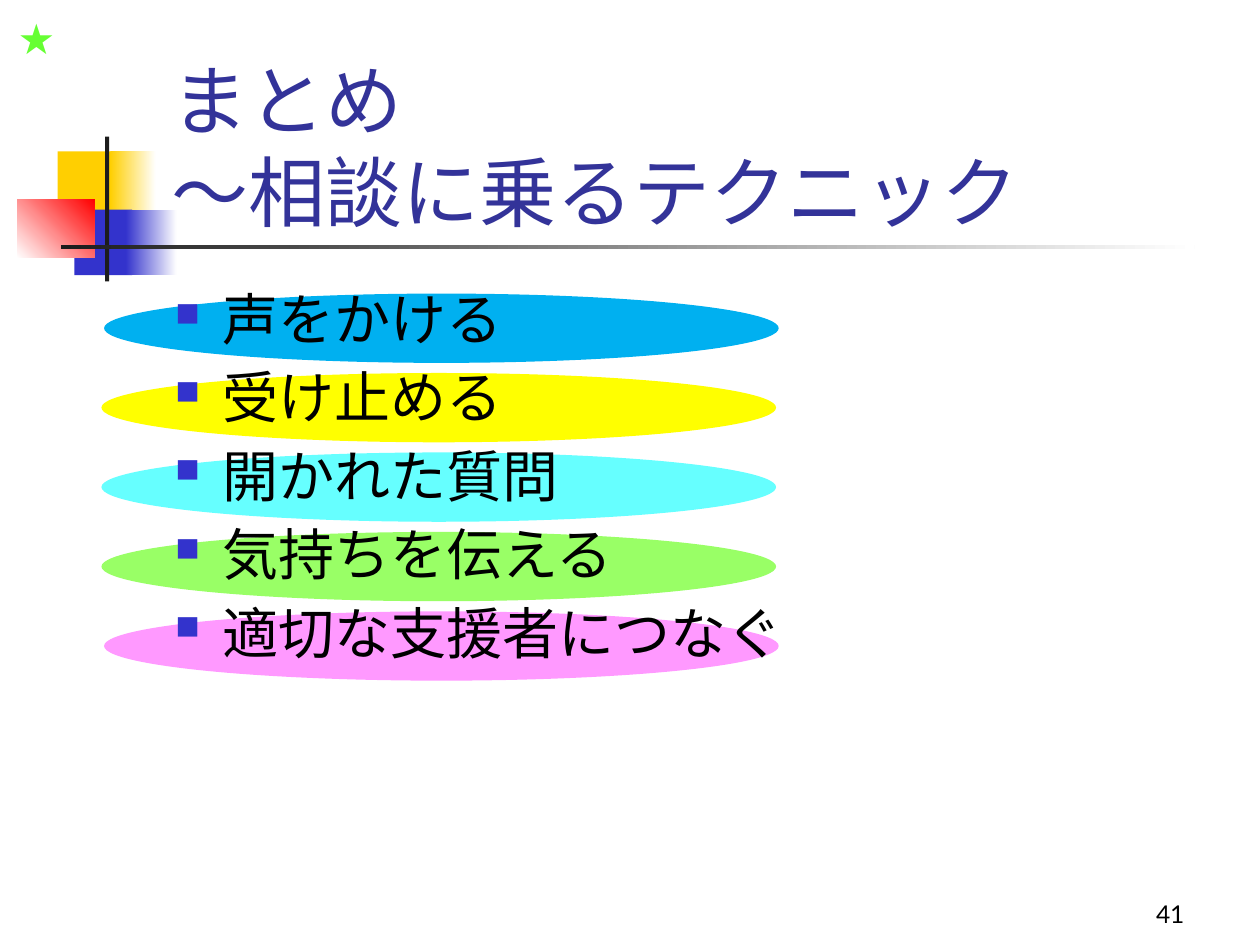
from lxml.etree import SubElement
from pptx import Presentation
from pptx.dml.color import RGBColor
from pptx.enum.shapes import MSO_SHAPE as Shape
from pptx.enum.text import MSO_ANCHOR as Anchor, MSO_AUTO_SIZE as AutoSize, PP_ALIGN as Align
from pptx.oxml.ns import qn
from pptx.util import Pt

WHITE = RGBColor(0xFF, 0xFF, 0xFF)
BLACK = RGBColor(0, 0, 0)
CHARCOAL = RGBColor(0x1C, 0x1C, 0x1C)
GOLD = RGBColor(0xFF, 0xCF, 0x01)
BLUE = RGBColor(0x33, 0x33, 0xCC)
NAVY = RGBColor(0x33, 0x33, 0x99)
RED = RGBColor(0xFF, 0, 0)
SKY = RGBColor(0, 0xB0, 0xF0)
YELLOW = RGBColor(0xFF, 0xFF, 0)
AQUA = RGBColor(0x66, 0xFF, 0xFF)
LIME = RGBColor(0x99, 0xFF, 0x66)
PINK = RGBColor(0xFF, 0x99, 0xFF)
GREEN = RGBColor(0x66, 0xFF, 0x33)


def add_bullet(para, color, indent, percent):
    """Give the paragraph a square bullet on a hanging indent."""
    props = para._p.get_or_add_pPr()
    props.set("marL", str(Pt(indent)))
    props.set("indent", str(-Pt(indent)))
    holder = SubElement(props, qn("a:buClr"))
    SubElement(holder, qn("a:srgbClr"), val=str(color))
    SubElement(props, qn("a:buSzPct"), val=str(percent * 1000))
    SubElement(props, qn("a:buChar"), char="■")


class SlideBuilder:
    font = "Lato"

    def __init__(self, page):
        self.page = page

    def shape(self, kind, left, top, width, height, color, end=None, angle=0):
        """Add a plain shape, or one fading from color to end."""
        shape = self.page.shapes.add_shape(kind, Pt(left), Pt(top), Pt(width), Pt(height))
        shape.shadow.inherit = False
        shape.line.fill.background()
        if end is None:
            shape.fill.solid()
            shape.fill.fore_color.rgb = color
        else:
            shape.fill.gradient()
            shape.fill.gradient_angle = angle
            for stop, tone in zip(shape.fill.gradient_stops, (color, end)):
                stop.color.rgb = tone

    def text(self, left, top, width, height, lines, size, color, align=Align.LEFT,
             anchor=Anchor.TOP, wrap=True, bullet=None, before=0):
        """Add a text box with one paragraph for each of the lines."""
        box = self.page.shapes.add_textbox(Pt(left), Pt(top), Pt(width), Pt(height))
        frame = box.text_frame
        frame.word_wrap = wrap
        frame.auto_size = AutoSize.NONE if wrap else AutoSize.SHAPE_TO_FIT_TEXT
        frame.vertical_anchor = anchor
        for index, line in enumerate(lines):
            para = frame.add_paragraph() if index else frame.paragraphs[0]
            para.text = line
            para.alignment = align
            para.space_before = Pt(before)
            for span in para.runs:
                span.font.name = self.font
                span.font.size = Pt(size)
                span.font.color.rgb = color
            if bullet is not None:
                add_bullet(para, bullet, indent=27, percent=60)


def main():
    deck = Presentation()
    deck.slide_width, deck.slide_height = Pt(720), Pt(540)
    page = deck.slides.add_slide(deck.slide_layouts[6])
    builder = SlideBuilder(page)

    # Corner ornament and title rule
    block = Shape.RECTANGLE
    builder.shape(block, 33, 86.5, 34.5, 37.5, GOLD)
    builder.shape(block, 63, 86.5, 26, 37.5, GOLD, WHITE)
    builder.shape(block, 42.5, 119.75, 33, 37.5, BLUE)
    builder.shape(block, 72, 119.75, 29, 37.5, BLUE, WHITE)
    builder.shape(block, 9.75, 113.75, 44.25, 33.5, WHITE, RED, angle=45)
    builder.shape(block, 60, 78, 2.4, 82.75, CHARCOAL)
    builder.shape(block, 34.75, 140.1, 648, 2.5, CHARCOAL, WHITE)

    # Coloured ellipses behind the points; first and last sit slightly right
    colors = (SKY, YELLOW, AQUA, LIME, PINK)
    for row, color in enumerate(colors):
        left = 59.5 if row in (0, len(colors) - 1) else 58
        builder.shape(Shape.OVAL, left, 167.75 + row * 45.4, 385.5, 39.6, color)

    # Title and points
    builder.text(90.75, 49, 613.5, 90, ["まとめ\v～相談に乗るテクニック"], 44, NAVY,
                 anchor=Anchor.BOTTOM)
    points = ["声をかける", "受け止める", "開かれた質問", "気持ちを伝える", "適切な支援者につなぐ"]
    builder.text(93, 159, 612, 324, points, 32, BLACK, bullet=BLUE, before=6.4)

    # Page number and corner star
    builder.text(534, 498, 150, 36, ["41"], 14, BLACK, align=Align.RIGHT, anchor=Anchor.BOTTOM)
    builder.text(3, 3.5, 39, 36, ["★"], 24, GREEN, wrap=False)

    deck.save("out.pptx")


if __name__ == "__main__":
    main()
